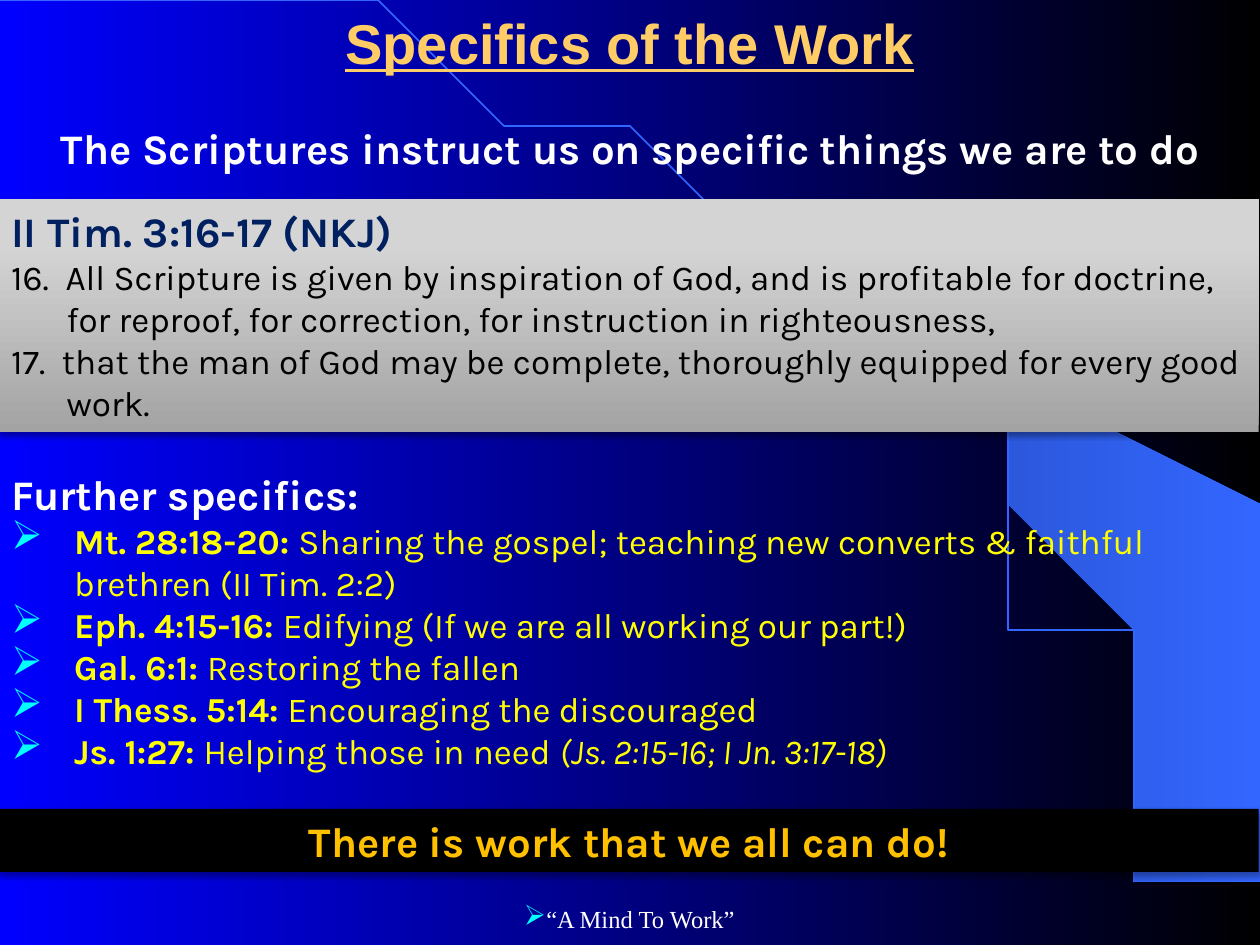
import math
from dataclasses import dataclass

from lxml import etree
from pptx import Presentation
from pptx.dml.color import RGBColor
from pptx.enum.shapes import MSO_SHAPE
from pptx.enum.text import MSO_ANCHOR, MSO_AUTO_SIZE, PP_ALIGN
from pptx.oxml.ns import qn
from pptx.util import Inches, Pt

RECTANGLE = MSO_SHAPE.RECTANGLE
LEFT, CENTER = PP_ALIGN.LEFT, PP_ALIGN.CENTER
TOP, MIDDLE = MSO_ANCHOR.TOP, MSO_ANCHOR.MIDDLE
NO_AUTOFIT = MSO_AUTO_SIZE.NONE

COLORS = {
    "blue": "0000FF", "black": "000000", "white": "FFFFFF", "gold": "FFCC66",
    "navy": "002060", "yellow": "FFFF00", "amber": "FFC000", "cyan": "00FFFF",
    "arc": "3366FF", "arc_dark": "2449B6", "gray": "A3A3A3", "light_gray": "D4D4D4",
}
BODY_FONT = "Karla"
ARC_WIDTH, ARC_HEIGHT = 9.2, 7.49
ARC_STEPS = 60
BAND_POINTS = [
    (9.2, 7.48), (9.99, 7.49), (9.99, 4.23), (5.89, 1.73), (6.24, 1.99), (6.53, 2.22),
    (6.85, 2.5), (7.16, 2.8), (7.62, 3.3), (8.03, 3.84), (8.32, 4.31), (8.58, 4.79),
    (8.78, 5.28), (8.93, 5.72), (9.03, 6.09), (9.13, 6.56), (9.17, 6.96), (9.2, 7.48),
]


@dataclass
class Specific:
    reference: str
    task: str
    aside: str = ""


VERSES = [
    "16.  All Scripture is given by inspiration of God, and is profitable for doctrine, "
    "for reproof, for correction, for instruction in righteousness,",
    "17.  that the man of God may be complete, thoroughly equipped for every good work.",
]
SPECIFICS = [
    Specific("Mt. 28:18-20: ", "Sharing the gospel; teaching new converts & faithful "
             "brethren (II Tim. 2:2)"),
    Specific("Eph. 4:15-16: ", "Edifying (If we are all working our part!)"),
    Specific("Gal. 6:1: ", "Restoring the fallen"),
    Specific("I Thess. 5:14: ", "Encouraging the discouraged"),
    Specific("Js. 1:27: ", "Helping those in need ", "(Js. 2:15-16; I Jn. 3:17-18)"),
]


def rgb(color: str) -> RGBColor:
    return RGBColor.from_string(COLORS[color])


def set_gradient(fill, start: str, end: str, angle: float = 0, end_position: float = 1) -> None:
    fill.gradient()
    fill.gradient_angle = angle
    first, last = fill.gradient_stops
    first.color.rgb, last.color.rgb = rgb(start), rgb(end)
    first.position, last.position = 0, end_position


def add_text(para, text: str, *, size: float = 20, color: str = "white", font: str = BODY_FONT,
             bold: bool = False, italic: bool = False, underline: bool = False) -> None:
    span = para.add_run()
    span.text = text
    span.font.name, span.font.size = font, Pt(size)
    span.font.color.rgb = rgb(color)
    span.font.bold, span.font.italic, span.font.underline = bold, italic, underline


def format_frame(box, anchor=TOP):
    frame = box.text_frame
    frame.word_wrap = True
    frame.auto_size = NO_AUTOFIT
    frame.vertical_anchor = anchor
    return frame


def add_para(frame, *, align=LEFT, hanging: float = 0.5, bullet: bool = False):
    """Use the empty first paragraph, or add another one."""
    first = frame.paragraphs[0]
    para = frame.add_paragraph() if first.runs else first
    para.alignment = align
    properties = para._p.get_or_add_pPr()
    properties.set("marL", str(Inches(hanging)))
    properties.set("indent", str(-Inches(hanging)))
    if bullet:
        bullet_color = etree.SubElement(properties, qn("a:buClr"))
        etree.SubElement(bullet_color, qn("a:srgbClr"), val=COLORS["cyan"])
        etree.SubElement(properties, qn("a:buSzPct"), val="115000")
        etree.SubElement(properties, qn("a:buChar"), char="➢")
    return para


def add_text_box(page, left: float, top: float, width: float, height: float, anchor=TOP):
    box = page.shapes.add_textbox(Inches(left), Inches(top), Inches(width), Inches(height))
    return format_frame(box, anchor)


def add_panel(page, top: float, height: float):
    """Add a full-width rectangle with a soft shadow below it."""
    panel = page.shapes.add_shape(RECTANGLE, Inches(-0.01), Inches(top), Inches(10), Inches(height))
    panel.line.fill.background()
    panel.shadow.inherit = False
    effects = panel._element.spPr.find(qn("a:effectLst"))
    shadow = etree.SubElement(effects, qn("a:outerShdw"), blurRad=str(Pt(3.1)),
                              dist=str(Pt(1.8)), dir="5400000", rotWithShape="0")
    shadow_color = etree.SubElement(shadow, qn("a:srgbClr"), val=COLORS["black"])
    etree.SubElement(shadow_color, qn("a:alpha"), val="35000")
    return panel


def add_outline(page, points: list[tuple[float, float]], close: bool):
    builder = page.shapes.build_freeform(*points[0], scale=Inches(1))
    builder.add_line_segments(points[1:], close=close)
    outline = builder.convert_to_shape()
    outline.shadow.inherit = False
    return outline


def draw_background(page) -> None:
    set_gradient(page.background.fill, "blue", "black")
    band = add_outline(page, BAND_POINTS, close=True)
    set_gradient(band.fill, "arc_dark", "arc")
    band.line.fill.background()

    angles = [math.pi / 2 * step / ARC_STEPS for step in range(ARC_STEPS + 1)]
    arc_points = [(ARC_WIDTH * math.sin(a), ARC_HEIGHT * (1 - math.cos(a))) for a in angles]
    arc = add_outline(page, arc_points, close=False)
    arc.fill.background()
    arc.line.color.rgb = rgb("arc")
    arc.line.width = Pt(1)


def draw_title(page) -> None:
    title = page.shapes.title
    title.left, title.top, title.width, title.height = 0, 0, Inches(10), Inches(0.67)
    para = add_para(format_frame(title, MIDDLE), align=CENTER, hanging=0)
    add_text(para, "Specifics of the Work", size=32, color="gold", font="Arial",
             bold=True, underline=True)
    # Bring the title in front of the background arc
    page.shapes._spTree.append(title._element)


def draw_scripture(page) -> None:
    panel = add_panel(page, 1.58, 1.85)
    set_gradient(panel.fill, "gray", "light_gray", angle=90, end_position=0.8)
    frame = format_frame(panel)
    add_text(add_para(frame), "II Tim. 3:16-17 (NKJ)", size=24, color="navy", bold=True)
    for verse in VERSES:
        add_text(add_para(frame, hanging=0.44), verse, color="black")


def draw_specifics(page) -> None:
    frame = add_text_box(page, -0.01, 3.67, 10, 2.52)
    add_text(add_para(frame), "Further specifics:", size=24, bold=True)
    for item in SPECIFICS:
        para = add_para(frame, bullet=True)
        add_text(para, item.reference, color="yellow", bold=True)
        add_text(para, item.task, color="yellow")
        if item.aside:
            add_text(para, item.aside, color="yellow", italic=True)


def main() -> None:
    deck = Presentation()
    deck.slide_width, deck.slide_height = Inches(10), Inches(7.5)
    page = deck.slides.add_slide(deck.slide_layouts[5])
    draw_background(page)

    # Footer
    footer = add_text_box(page, 0, 7.09, 9.99, 0.41, MIDDLE)
    add_text(add_para(footer, align=CENTER, hanging=0, bullet=True), "“A Mind To Work”",
             size=14, font="Times New Roman")

    draw_title(page)

    # Lead sentence
    lead = add_text_box(page, 0, 0.92, 10, 0.5)
    add_text(add_para(lead, align=CENTER),
             "The Scriptures instruct us on specific things we are to do", size=24, bold=True)

    draw_scripture(page)
    draw_specifics(page)

    # Closing banner
    banner = add_panel(page, 6.42, 0.5)
    banner.fill.solid()
    banner.fill.fore_color.rgb = rgb("black")
    add_text(add_para(format_frame(banner), align=CENTER),
             "There is work that we all can do!", size=24, color="amber", bold=True)
    deck.save("out.pptx")


if __name__ == "__main__":
    main()
